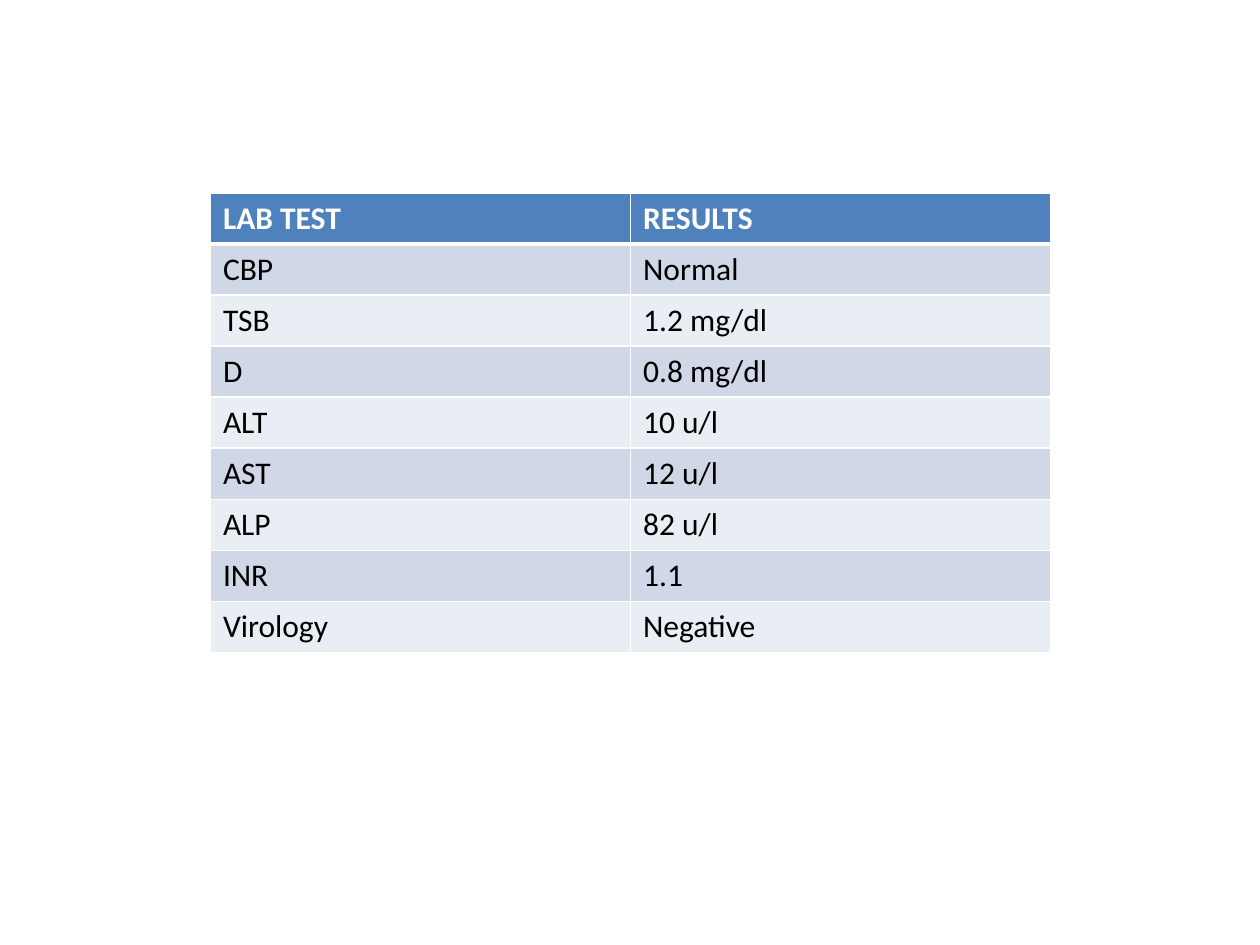
import pptx
import pptx.util
import pptx.dml.color
import pptx.oxml.ns
import lxml.etree
from dataclasses import dataclass

ROWS = [
    ("LAB TEST", "RESULTS"),
    ("CBP", "Normal"),
    ("TSB", "1.2 mg/dl"),
    ("D", "0.8 mg/dl"),
    ("ALT", "10 u/l"),
    ("AST", "12 u/l"),
    ("ALP", "82 u/l"),
    ("INR", "1.1"),
    ("Virology", "Negative"),
]


@dataclass(frozen=True)
class Theme:
    font: str = "Calibri"
    size: int = 18
    head: str = "4F81BD"
    bands: tuple = ("D0D8E8", "E9EDF4")
    white: str = "FFFFFF"
    black: str = "000000"
    thin: int = 1
    thick: int = 3


THEME = Theme()
Inches = pptx.util.Inches
LEFT, TOP, WIDTH, HEIGHT = 1.67, 1.53, 6.67, 3.65


def color(code):
    return pptx.dml.color.RGBColor.from_string(code)


def write(frame, text, *, ink, bold=False):
    para = frame.paragraphs[0]
    run = para.add_run()
    run.text = text
    run.font.name = THEME.font
    run.font.size = pptx.util.Pt(THEME.size)
    run.font.bold = bold
    run.font.color.rgb = color(ink)


def border(cell, **sides):
    props = cell._tc.get_or_add_tcPr()
    qn = pptx.oxml.ns.qn
    for side, width in sides.items():
        line = lxml.etree.SubElement(props, qn("a:ln" + side), w=str(pptx.util.Pt(width)))
        fill = lxml.etree.SubElement(line, qn("a:solidFill"))
        lxml.etree.SubElement(fill, qn("a:srgbClr"), val=THEME.white)


def paint(cell, code):
    cell.fill.solid()
    cell.fill.fore_color.rgb = color(code)


def main():
    deck = pptx.Presentation()
    deck.slide_width, deck.slide_height = Inches(10), Inches(7.5)
    slide = deck.slides.add_slide(deck.slide_layouts[6])
    table = slide.shapes.add_table(
        len(ROWS), len(ROWS[0]),
        Inches(LEFT), Inches(TOP), Inches(WIDTH), Inches(HEIGHT),
    ).table

    for r, row in enumerate(ROWS):
        head = r == 0
        for c, text in enumerate(row):
            cell = table.cell(r, c)
            border(
                cell, L=THEME.thin, R=THEME.thin,
                T=THEME.thick if r == 1 else THEME.thin,
                B=THEME.thick if head else THEME.thin,
            )
            paint(cell, THEME.head if head else THEME.bands[(r - 1) % 2])
            write(cell.text_frame, text, ink=THEME.white if head else THEME.black, bold=head)

    deck.save("out.pptx")


if __name__ == "__main__":
    main()
